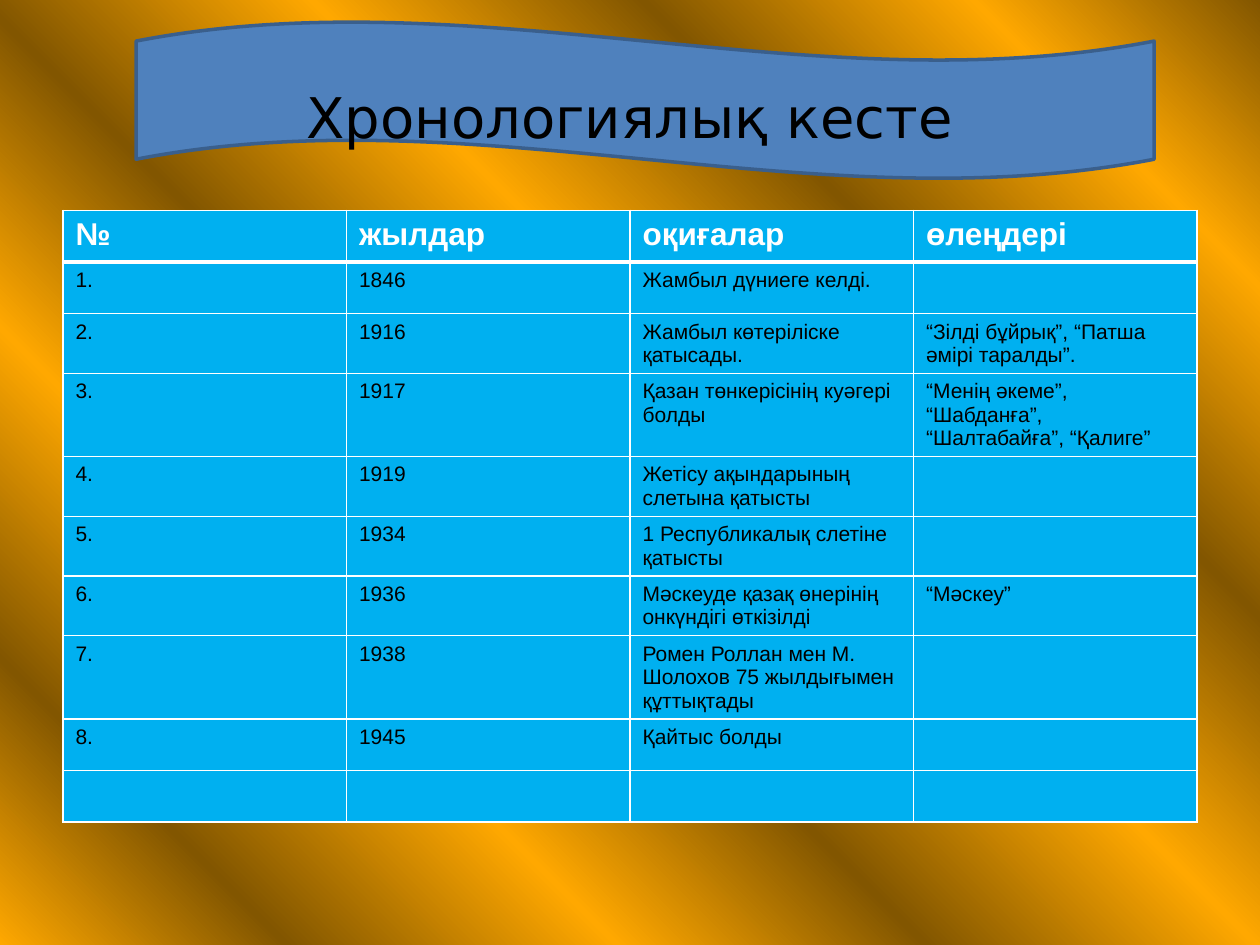
from pptx import Presentation
from pptx.dml.color import RGBColor as Rgb
from pptx.enum.shapes import MSO_SHAPE as Shape
from pptx.enum.text import MSO_ANCHOR as Anchor, PP_ALIGN as Align
from pptx.oxml.ns import qn
from pptx.util import Inches, Pt
from lxml.etree import SubElement as Sub

TITLE = "Хронологиялық кесте"
HEAD = ("№", "жылдар", "оқиғалар", "өлеңдері")
EVENTS = [
    ("1846", "Жамбыл дүниеге келді.", ""),
    ("1916", "Жамбыл көтеріліске қатысады.",
     "“Зілді бұйрық”, “Патша әмірі таралды”."),
    ("1917", "Қазан төнкерісінің куәгері болды",
     "“Менің әкеме”, “Шабданға”, “Шалтабайға”, “Қалиге”"),
    ("1919", "Жетісу ақындарының слетына қатысты", ""),
    ("1934", "1 Республикалық слетіне қатысты", ""),
    ("1936", "Мәскеуде қазақ өнерінің онкүндігі өткізілді", "“Мәскеу”"),
    ("1938", "Ромен Роллан мен М. Шолохов 75 жылдығымен құттықтады", ""),
    ("1945", "Қайтыс болды", ""),
]
THEME = {
    "dark": "825600", "gold": "FFA800", "wave": "4F81BD", "edge": "3A5F8C",
    "cell": "00B0F0", "white": "FFFFFF", "ink": "000000",
    "title": 32, "head": 18, "body": 12,
    "sans": "Arial", "wide": "DejaVu Sans",
}
STOPS = (0, 13, 28, 43, 58, 72, 87, 100)
WIDE, HIGH = Inches(10), Inches(7.5)
EDGE = WIDE // 20
SPAN = WIDE - 2 * EDGE
ROW = Inches(0.41)


def tint(name):
    return Rgb.from_string(THEME[name])


def style(par, face, size, ink, bold=False):
    font = par.font
    font.name, font.size = THEME[face], Pt(THEME[size])
    font.bold, font.color.rgb = bold, tint(ink)


def paint(slide):
    fill = slide.background.fill
    fill.gradient()
    fill.gradient_angle = 225
    stops = slide.element.find(".//" + qn("a:gsLst"))
    for old in list(stops):
        stops.remove(old)
    for i, pos in enumerate(STOPS):
        stop = Sub(stops, qn("a:gs"), pos=str(pos * 1000))
        Sub(stop, qn("a:srgbClr"), val=THEME[("dark", "gold")[i % 2]])


def border(cell, top, base):
    props = cell._tc.get_or_add_tcPr()
    sides = (("a:lnL", 1), ("a:lnR", 1), ("a:lnT", top), ("a:lnB", base))
    for side, size in sides:
        line = Sub(props, qn(side), w=str(Pt(size)))
        Sub(Sub(line, qn("a:solidFill")), qn("a:srgbClr"), val=THEME["white"])


def banner(slide):
    wave = slide.shapes.add_shape(
        Shape.WAVE, Inches(1.08), Inches(0.17), Inches(8.08), Inches(1.25))
    wave.shadow.inherit = False
    wave.fill.solid()
    wave.fill.fore_color.rgb = tint("wave")
    wave.line.color.rgb = tint("edge")
    wave.line.width = Pt(2)


def grid(slide):
    rows = [HEAD]
    rows += [(f"{i}.", *row) for i, row in enumerate(EVENTS, 1)]
    rows.append(("",) * len(HEAD))
    table = slide.shapes.add_table(
        len(rows), len(HEAD), EDGE, Inches(1.67), SPAN, ROW * len(rows)).table
    for r, row in enumerate(rows):
        for c, text in enumerate(row):
            cell = table.cell(r, c)
            border(cell, 3 if r == 1 else 1, 3 if r == 0 else 1)
            cell.fill.solid()
            cell.fill.fore_color.rgb = tint("cell")
            if text:
                cell.text = text
                look = ("body", "ink") if r else ("head", "white", True)
                style(cell.text_frame.paragraphs[0], "sans", *look)


def title(slide):
    frame = slide.shapes.add_textbox(
        EDGE, Inches(0.3), SPAN, HIGH // 6).text_frame
    frame.word_wrap = True
    frame.vertical_anchor = Anchor.MIDDLE
    par = frame.paragraphs[0]
    par.text, par.alignment = TITLE, Align.CENTER
    style(par, "wide", "title", "ink")


def main():
    deck = Presentation()
    deck.slide_width, deck.slide_height = WIDE, HIGH
    slide = deck.slides.add_slide(deck.slide_layouts[6])
    for draw in (paint, banner, grid, title):
        draw(slide)
    deck.save("out.pptx")


if __name__ == "__main__":
    main()
